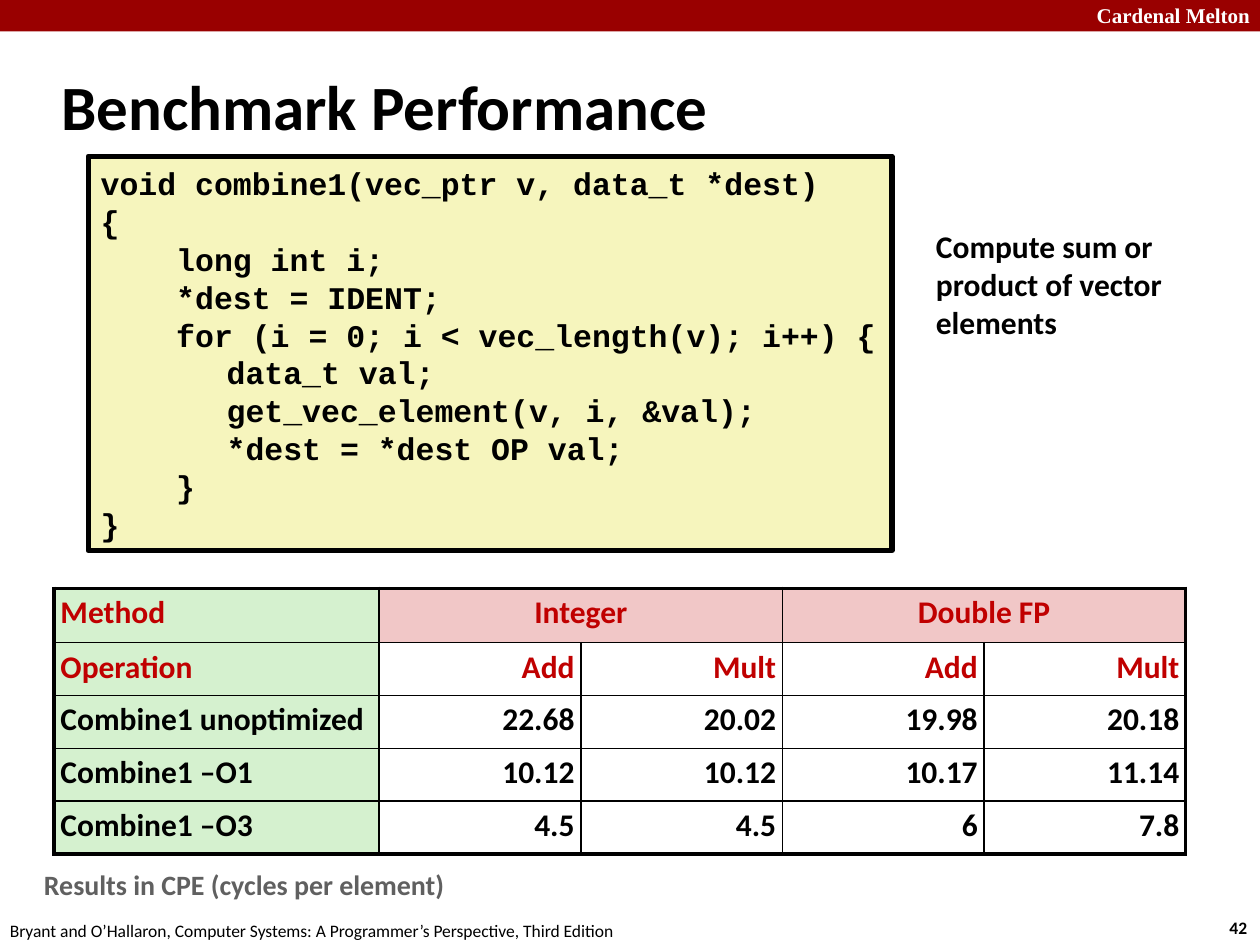
from lxml import etree
from pptx import Presentation
from pptx.dml.color import RGBColor
from pptx.enum.shapes import MSO_SHAPE
from pptx.enum.text import MSO_ANCHOR, PP_ALIGN
from pptx.oxml.ns import qn
from pptx.util import Inches, Pt

RECT = MSO_SHAPE.RECTANGLE
MIDDLE = MSO_ANCHOR.MIDDLE
LEFT, CENTER, RIGHT = PP_ALIGN.LEFT, PP_ALIGN.CENTER, PP_ALIGN.RIGHT
COLORS = {
    "band": "990000", "white": "FFFFFF", "black": "000000", "code": "F6F5BD",
    "red": "C00000", "green": "D5F1CF", "pink": "F1C7C7", "gray": "606060",
}


def rgb(name):
    return RGBColor.from_string(COLORS[name])


def write(par, text, size, color="black", font="Calibri", bold=True):
    """Add one styled run to a paragraph."""
    run = par.add_run()
    run.text = text
    run.font.size = Pt(size)
    run.font.name = font
    run.font.bold = bold
    run.font.color.rgb = rgb(color)


prs = Presentation()
prs.slide_width, prs.slide_height = Inches(10), Inches(7.5)
slide = prs.slides.add_slide(prs.slide_layouts[6])
shapes = slide.shapes

# Top band
band = shapes.add_shape(RECT, 0, 0, Inches(10), Inches(0.25))
band.shadow.inherit = False
band.fill.solid()
band.fill.fore_color.rgb = rgb("band")
band.line.fill.background()

# Text boxes: place, alignment, then text and style
labels = [
    ((8.59, -0.03, 1.43, 0.3), RIGHT,
     ("Cardenal Melton", 12, "white", "Times New Roman")),
    ((9.66, 7.23, 0.37, 0.27), LEFT, ("42", 10)),
    ((-0.02, 7.25, 5.08, 0.27), LEFT,
     ("Bryant and O’Hallaron, Computer Systems: A Programmer’s Perspective, "
      "Third Edition", 10, "black", "Calibri", False)),
    ((0.39, 0.42, 8.3, 0.83), LEFT, ("Benchmark Performance", 36)),
    ((7.33, 1.75, 2.67, 1.01), LEFT,
     ("Compute sum or product of vector elements", 18)),
    ((0.25, 6.83, 5.92, 0.37), LEFT,
     ("Results in CPE (cycles per element)", 16, "gray")),
]
for place, align, style in labels:
    box = shapes.add_textbox(*map(Inches, place))
    frame = box.text_frame
    frame.word_wrap = True
    frame.vertical_anchor = MIDDLE
    par = frame.paragraphs[0]
    par.alignment = align
    write(par, *style)

# Code panel: each line with its indent in inches
lines = [
    (0, "void combine1(vec_ptr v, data_t *dest)"),
    (0, "{"),
    (0.6, "long int i;"),
    (0.6, "*dest = IDENT;"),
    (0.6, "for (i = 0; i < vec_length(v); i++) {"),
    (1, "data_t val;"),
    (1, "get_vec_element(v, i, &val);"),
    (1, "*dest = *dest OP val;"),
    (0.6, "}"),
    (0, "}"),
]
panel = shapes.add_shape(RECT, *map(Inches, (0.7, 1.24, 6.38, 3.13)))
panel.shadow.inherit = False
panel.fill.solid()
panel.fill.fore_color.rgb = rgb("code")
panel.line.color.rgb = rgb("black")
panel.line.width = Pt(3)
frame = panel.text_frame
frame.word_wrap = True
frame.vertical_anchor = MIDDLE
for i, (indent, text) in enumerate(lines):
    par = frame.add_paragraph() if i else frame.paragraphs[0]
    par.alignment = LEFT
    par._p.get_or_add_pPr().set("marL", str(Inches(indent)))
    write(par, text, 18, font="Courier New")

# Results table
rows = [
    ["Method", "Integer", "", "Double FP", ""],
    ["Operation", "Add", "Mult", "Add", "Mult"],
    ["Combine1 unoptimized", "22.68", "20.02", "19.98", "20.18"],
    ["Combine1 –O1", "10.12", "10.12", "10.17", "11.14"],
    ["Combine1 –O3", "4.5", "4.5", "6", "7.8"],
]
last = len(rows) - 1
table = shapes.add_table(
    5, 5, *map(Inches, (0.43, 4.67, 9, 2.12))).table
for c, col in enumerate(table.columns):
    col.width = Inches(1.6 if c else 2.58)
for r, row in enumerate(table.rows):
    row.height = Inches(0.42 if r else 0.43)
for c in (1, 3):
    table.cell(0, c).merge(table.cell(0, c + 1))

for r, row in enumerate(rows):
    for c, text in enumerate(row):
        cell = table.cell(r, c)
        cell.margin_left = cell.margin_right = Inches(0.05)
        cell.margin_top = cell.margin_bottom = Inches(0.05)
        edges = {"lnL": c == 0, "lnR": c == last,
                 "lnT": r == 0, "lnB": r == last}
        if cell.is_merge_origin:
            edges["lnR"] = c + 1 == last
        props = cell._tc.get_or_add_tcPr()
        for tag, outer in edges.items():
            edge = etree.SubElement(props, qn("a:" + tag),
                                    w=str(Pt(2.25 if outer else 1)))
            fill = etree.SubElement(edge, qn("a:solidFill"))
            etree.SubElement(fill, qn("a:srgbClr"), val=COLORS["black"])
        cell.fill.solid()
        shade = "green" if c == 0 else "white" if r else "pink"
        cell.fill.fore_color.rgb = rgb(shade)
        if text:
            par = cell.text_frame.paragraphs[0]
            par.line_spacing = 0.95
            par.alignment = LEFT if c == 0 else RIGHT if r else CENTER
            write(par, text, 18, "red" if r < 2 else "black")

prs.save("out.pptx")
